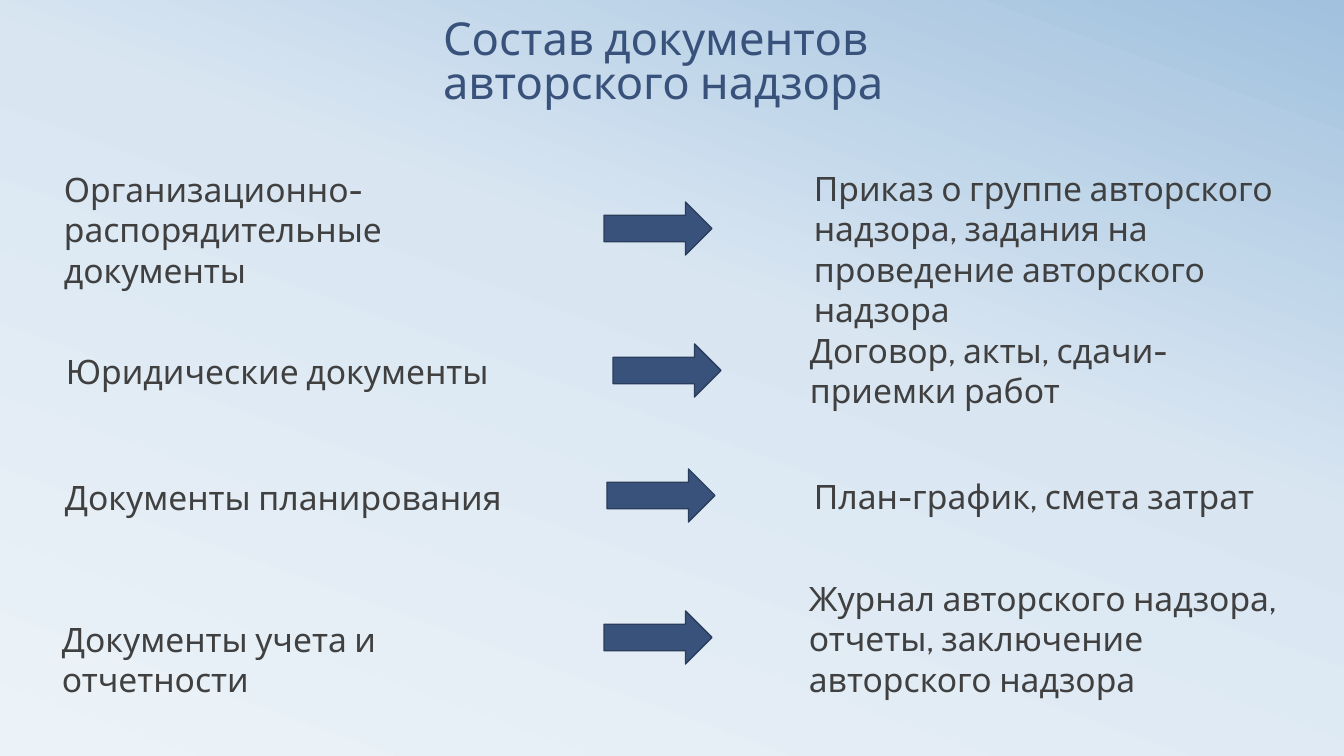
from copy import deepcopy

from pptx import Presentation
from pptx.dml.color import RGBColor
from pptx.enum.shapes import MSO_SHAPE
from pptx.enum.text import MSO_ANCHOR, MSO_AUTO_SIZE, PP_ALIGN
from pptx.oxml.ns import qn
from pptx.util import Pt

# Content: lengths in px, boxes as (left, top, width, height)
TITLE = "Состав документов авторского надзора"
TITLE_BOX = (433, 9, 469, 104)
ROWS = [
    # (document kind, box), (arrow left, arrow top), (examples, box)
    (("Организационно-распорядительные документы", (54, 164, 511, 92)),
     (604, 202),
     ("Приказ о группе авторского надзора, задания на проведение авторского надзора",
      (804, 163, 511, 132))),
    (("Юридические документы", (56, 346, 464, 50)),
     (613, 344),
     ("Договор, акты, сдачи-приемки работ", (800, 325, 511, 92))),
    (("Документы планирования", (55, 472, 511, 50)),
     (607, 469),
     ("План-график, смета затрат", (804, 471, 511, 50))),
    (("Документы учета и отчетности", (52, 614, 514, 50)),
     (604, 611),
     ("Журнал авторского надзора, отчеты, заключение авторского надзора",
      (799, 573, 511, 132))),
]
ARROW_SIZE = (108, 53)
BACKGROUND_STOPS = [(0, "ECF3F8"), (0.58, "D9E6F2"), (1, "A1C1DE")]
FONT = "Cabin"
NAVY, NAVY_EDGE, GRAY = "39527B", "2A3D5B", "404040"

SCALE = 914400 / 100.8


def px(*lengths):
    return [round(length * SCALE) for length in lengths]


def color(hex_string):
    return RGBColor.from_string(hex_string)


def style(paragraph, size, hex_string):
    paragraph.alignment = PP_ALIGN.LEFT
    paragraph.font.name = FONT
    paragraph.font.size = Pt(size)
    paragraph.font.color.rgb = color(hex_string)


def add_text(slide, text, box):
    frame = slide.shapes.add_textbox(*px(*box)).text_frame
    frame.word_wrap = True
    frame.auto_size = MSO_AUTO_SIZE.SHAPE_TO_FIT_TEXT
    frame.text = text
    style(frame.paragraphs[0], 24, GRAY)


def add_arrow(slide, position):
    arrow = slide.shapes.add_shape(MSO_SHAPE.RIGHT_ARROW, *px(*position, *ARROW_SIZE))
    arrow.shadow.inherit = False
    arrow.fill.solid()
    arrow.fill.fore_color.rgb = color(NAVY)
    arrow.line.color.rgb = color(NAVY_EDGE)
    arrow.line.width = Pt(1)


def paint_background(slide):
    fill = slide.background.fill
    fill.gradient()
    fill.gradient_angle = 70
    # The default gradient has two stops; add the third
    stop_list = next(slide.element.iter(qn("a:gsLst")))
    stop_list.append(deepcopy(stop_list[-1]))
    for stop, (position, hex_string) in zip(fill.gradient_stops, BACKGROUND_STOPS):
        stop.position = position
        stop.color.rgb = color(hex_string)


def main():
    presentation = Presentation()
    presentation.slide_width, presentation.slide_height = px(1344, 756)
    slide = presentation.slides.add_slide(presentation.slide_layouts[5])
    paint_background(slide)

    # Title
    title = slide.shapes.title
    title.left, title.top, title.width, title.height = px(*TITLE_BOX)
    frame = title.text_frame
    frame.text = TITLE
    frame.word_wrap = True
    frame.auto_size = MSO_AUTO_SIZE.NONE
    frame.vertical_anchor = MSO_ANCHOR.BOTTOM
    frame.paragraphs[0].line_spacing = 0.8
    style(frame.paragraphs[0], 32.4, NAVY)

    # Rows: kind of document, arrow, examples
    for kind, arrow_position, examples in ROWS:
        add_text(slide, *kind)
        add_arrow(slide, arrow_position)
        add_text(slide, *examples)

    presentation.save("out.pptx")


if __name__ == "__main__":
    main()
